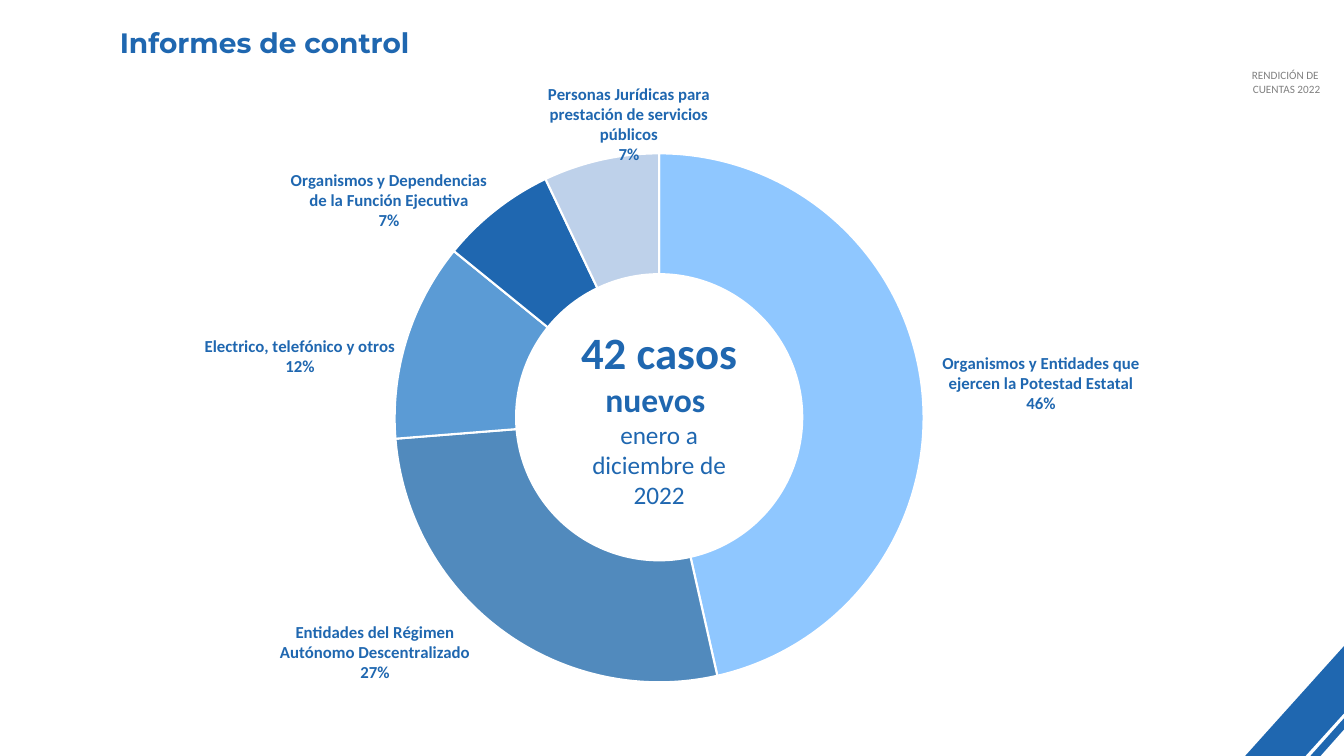
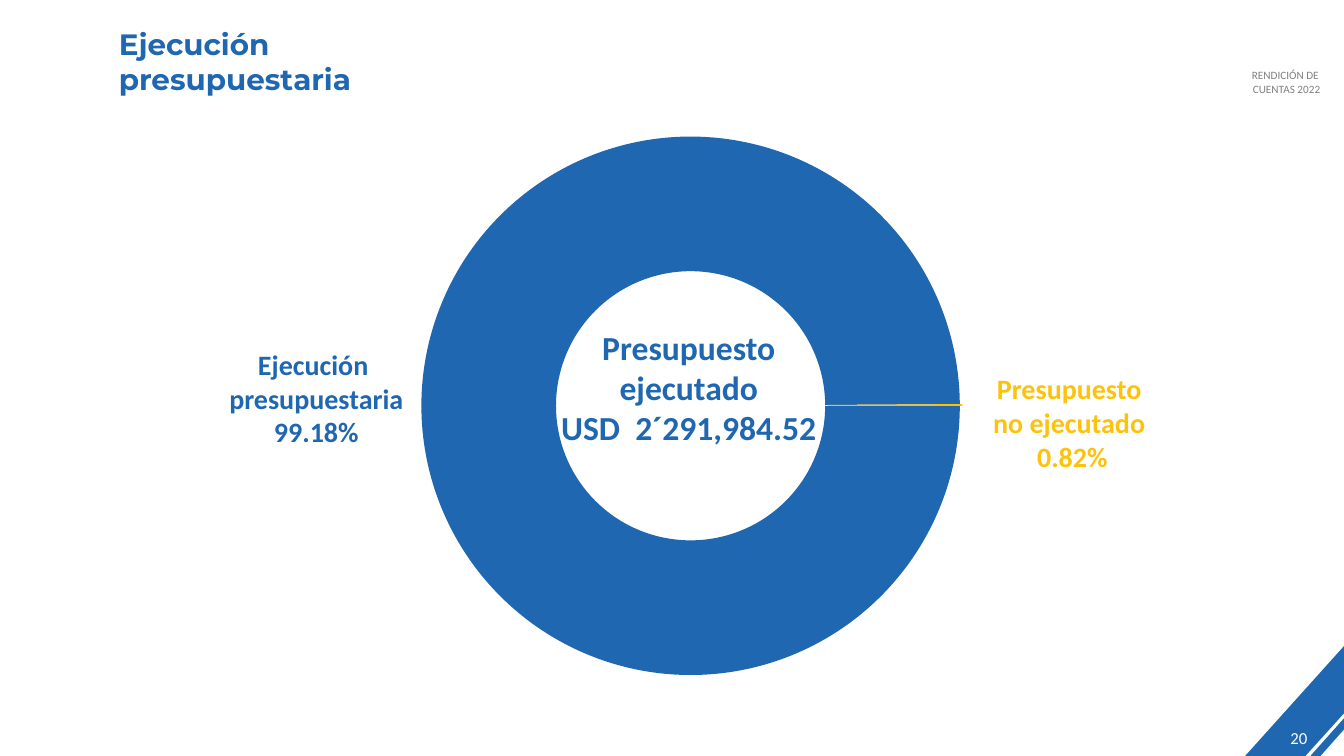
from copy import deepcopy
from math import cos, pi, sin
from lxml import etree
from pptx import Presentation
from pptx.chart.data import CategoryChartData as Data
from pptx.dml.color import RGBColor
from pptx.enum.chart import XL_CHART_TYPE as Kind
from pptx.enum.shapes import MSO_SHAPE as Form
from pptx.enum.text import MSO_ANCHOR as Anchor, PP_ALIGN as Align
from pptx.oxml import parse_xml
from pptx.oxml.ns import nsdecls, qn
from pptx.util import Pt

WIDE, HIGH = 960, 540
BLUE = RGBColor(0x1F, 0x67, 0xB0)
SKY = RGBColor(0x8F, 0xC7, 0xFF)
STEEL = RGBColor(0x51, 0x8A, 0xBD)
AZURE = RGBColor(0x5B, 0x9B, 0xD5)
PALE = RGBColor(0xBE, 0xD1, 0xEA)
AMBER = RGBColor(0xFF, 0xC0, 0x00)
GOLD = RGBColor(0xFD, 0xC2, 0x0B)
GRAY = RGBColor(0x80, 0x80, 0x80)
BLACK = RGBColor(0, 0, 0)
WHITE = RGBColor(0xFF, 0xFF, 0xFF)
BODY, HEAD = "Calibri", "Montserrat"

CASES = [
    ("Organismos y Entidades que ejercen la Potestad Estatal", 46, SKY, (743.6, 274.3)),
    ("Entidades del Régimen Autónomo Descentralizado", 27, STEEL, (267.9, 466.4)),
    ("Electrico, telefónico y otros", 12, AZURE, (214.3, 255)),
    ("Organismos y Dependencias de la Función Ejecutiva", 7, BLUE, (277.9, 143.6)),
    ("Personas Jurídicas para prestación de servicios públicos", 7, PALE, (449.3, 89.3)),
]


def write(shape, lines, align=Align.CENTER, anchor=Anchor.TOP):
    frame = shape.text_frame
    frame.word_wrap = True
    frame.vertical_anchor = anchor
    for i, line in enumerate(lines):
        para = frame.paragraphs[0] if i == 0 else frame.add_paragraph()
        para.alignment = align
        for text, size, color, bold, face in line:
            run = para.add_run()
            run.text = text
            font = run.font
            font.size, font.bold, font.name = Pt(size), bold, face
            font.color.rgb = color


def put_text(slide, box, lines, **style):
    shape = slide.shapes.add_textbox(*map(Pt, box))
    write(shape, lines, **style)


def put_note(slide, box, texts, size, color, bold=True):
    put_text(slide, box, [[(text, size, color, bold, BODY)] for text in texts])


def put_shape(slide, form, box, color):
    shape = slide.shapes.add_shape(form, *map(Pt, box))
    shape.shadow.inherit = False
    shape.fill.solid()
    shape.fill.fore_color.rgb = color
    shape.line.fill.background()
    return shape


def put_frame(slide, title, size, box):
    sides = [(70.6, 78.5, BLUE), (27.4, 30.3, WHITE), (24, 26.9, BLUE), (16.6, 18.7, WHITE)]
    for wide, high, color in sides:
        wedge = put_shape(slide, Form.RIGHT_TRIANGLE, (WIDE - wide, HIGH - high, wide, high), color)
        wedge._element.spPr.xfrm.set("flipH", "1")
    put_note(slide, (878, 45.4, 82, 26.6), ["RENDICIÓN DE ", "CUENTAS 2022"], 8, GRAY, False)
    put_text(slide, box, [[(title, size, BLUE, True, HEAD)]], align=Align.LEFT)


def lay_out(area, plot):
    for old in area.findall(qn("c:layout")):
        area.remove(old)
    parts = "".join(f'<c:{tag} val="{val}"/>' for tag, val in zip("xywh", plot))
    area.insert(0, parse_xml(
        f'<c:layout {nsdecls("c")}><c:manualLayout><c:layoutTarget val="inner"/>'
        f'<c:xMode val="edge"/><c:yMode val="edge"/>{parts}</c:manualLayout></c:layout>'))


def put_ring(slide, box, plot, names, vals, colors, size, hole, start=0, edge=None):
    data = Data()
    data.categories = names
    data.add_series("Series 1", vals)
    chart = slide.shapes.add_chart(Kind.DOUGHNUT, *map(Pt, box), data).chart
    chart.has_legend = chart.has_title = False
    chart.font.size, chart.font.name = Pt(size), BODY
    chart.font.color.rgb = BLACK
    ring = chart.plots[0]
    ring.has_data_labels = False
    ring.vary_by_categories = True
    area = chart._chartSpace.chart.plotArea
    lay_out(area, plot)
    for tag, val in (("c:firstSliceAng", start), ("c:holeSize", hole)):
        next(area.iter(qn(tag))).set("val", str(val))
    series = ring.series[0]
    for i, color in enumerate(colors):
        look = series.points[i].format
        look.fill.solid()
        look.fill.fore_color.rgb = color
        if edge is None:
            look.line.fill.background()
        else:
            look.line.color.rgb = edge
            look.line.width = Pt(1.5)
    return series


def put_labels(series, box, plot, vals, spots):
    left, top, wide, high = box
    mid_x = left + wide * (plot[0] + plot[2] / 2)
    mid_y = top + high * (plot[1] + plot[3] / 2)
    reach = wide * plot[2] * 0.375
    labels = series.data_labels
    font = labels.font
    font.size, font.bold, font.name = Pt(12), True, BODY
    font.color.rgb = BLUE
    labels.show_value = False
    labels.show_category_name = labels.show_percentage = True
    root = labels._element
    style = root.find(qn("c:txPr"))
    style.find(qn("a:bodyPr")).set("wrap", "square")
    for lead in root.findall(qn("c:showLeaderLines")):
        lead.set("val", "0")
    split = etree.Element(qn("c:separator"))
    split.text = "\n"
    last = root.find(qn("c:showBubbleSize"))
    if last is None:
        last = root.find(qn("c:showPercent"))
    last.addnext(split)
    flags = {"LegendKey": 0, "Val": 0, "CatName": 1, "SerName": 0, "Percent": 1, "BubbleSize": 0}
    shows = "".join(f'<c:show{name} val="{on}"/>' for name, on in flags.items())
    done = 0
    for i, (val, spot) in enumerate(zip(vals, spots)):
        turn = 2 * pi * (done + val / 2) / sum(vals)
        done += val
        dx = (spot[0] - mid_x - reach * sin(turn)) / wide
        dy = (spot[1] - mid_y + reach * cos(turn)) / high
        label = parse_xml(
            f'<c:dLbl {nsdecls("c")}><c:idx val="{i}"/><c:layout><c:manualLayout>'
            f'<c:x val="{dx:.4f}"/><c:y val="{dy:.4f}"/></c:manualLayout></c:layout>{shows}</c:dLbl>')
        label.insert(2, deepcopy(style))
        label.append(deepcopy(split))
        root.insert(i, label)


def make_cases(slide):
    put_frame(slide, "Informes de control", 20, (78.5, 14.4, 649.4, 32.4))
    box, plot = (78.5, 46.8, 785.5, 457.2), (0.259, 0.137, 0.481, 0.827)
    names, vals, colors, spots = zip(*CASES)
    series = put_ring(slide, box, plot, names, vals, colors, 10, 50, edge=WHITE)
    put_labels(series, box, plot, vals, spots)
    core = put_shape(slide, Form.OVAL, (367.9, 195.1, 205.9, 205.9), WHITE)
    write(core, [
        [("42 casos", 32, BLUE, True, BODY), (" nuevos ", 24, BLUE, True, BODY)],
        [("enero a diciembre de 2022", 18, BLUE, False, BODY)],
    ], anchor=Anchor.MIDDLE)


def make_budget(slide):
    put_frame(slide, "Ejecución presupuestaria", 21, (77.8, 15.1, 200, 58.3))
    put_text(slide, (907.9, 513.4, 39.6, 28.8 - 2.2), [[("20", 12, WHITE, False, BODY)]],
             anchor=Anchor.MIDDLE)
    series = put_ring(slide, (261.4, 68.4, 514.1, 467.3), (0.077, 0.06, 0.752, 0.828),
                      ["1", "2"], [100, 0.1], [BLUE, AMBER], 18, 67, start=90)
    series._element.find(qn("c:tx")).addnext(
        parse_xml(f'<c:explosion {nsdecls("c")} val="1"/>'))
    put_note(slide, (390, 229.7, 204, 94.3),
             ["Presupuesto", " ejecutado ", "USD  2´291,984.52"], 24, BLUE)
    put_note(slide, (671, 262.1, 190, 79.9), ["Presupuesto ", "no ejecutado ", "0.82%"], 20, GOLD)
    put_note(slide, (146, 244.8, 160, 79.9), ["Ejecución ", "presupuestaria", "99.18%"], 20, BLUE)


def main():
    deck = Presentation()
    deck.slide_width, deck.slide_height = Pt(WIDE), Pt(HIGH)
    for make in (make_cases, make_budget):
        make(deck.slides.add_slide(deck.slide_layouts[6]))
    deck.save("out.pptx")


if __name__ == "__main__":
    main()
